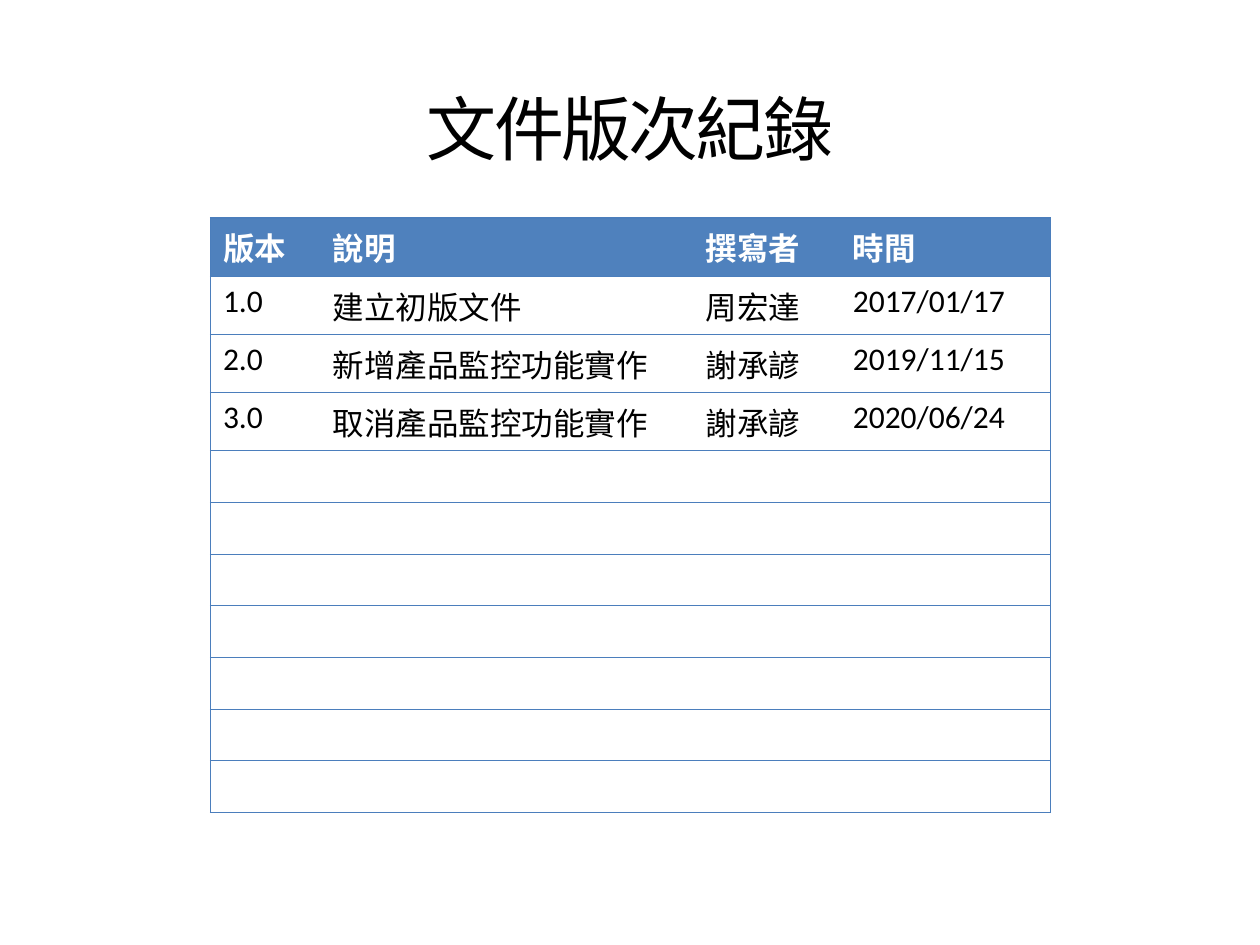
from lxml.etree import SubElement
from pptx import Presentation
from pptx.dml.color import RGBColor
from pptx.enum.text import MSO_ANCHOR, PP_ALIGN
from pptx.oxml.ns import qn
from pptx.util import Inches, Pt

TITLE = "文件版次紀錄"
HEADER = ("版本", "說明", "撰寫者", "時間")
REVISIONS = [
    ("1.0", "建立初版文件", "周宏達", "2017/01/17"),
    ("2.0", "新增產品監控功能實作", "謝承諺", "2019/11/15"),
    ("3.0", "取消產品監控功能實作", "謝承諺", "2020/06/24"),
]
EMPTY_ROWS = 7
COLUMN_WIDTHS = (0.87, 2.96, 1.17, 1.67)
ROW_HEIGHT = 0.41

THEME = {
    "title_font": "Noto Sans CJK SC",
    "table_font": "Calibri",
    "title_size": 40,
    "table_size": 18,
    "title_spacing": -1.5,
    "border_width": 0.75,
    "border": "4B7EBC",
    "header": "4F81BD",
    "header_text": "FFFFFF",
    "text": "000000",
}


def color(name):
    return RGBColor.from_string(THEME[name])


def style_span(span, font, size, text_color, bold=False):
    span.font.name = THEME[font]
    span.font.size = Pt(THEME[size])
    span.font.bold = bold
    span.font.color.rgb = color(text_color)


def add_title(page):
    box = page.shapes.title
    box.left, box.top = Inches(0.51), Inches(0.68)
    box.width, box.height = Inches(8.98), Inches(1.07)
    frame = box.text_frame
    frame.text = TITLE
    frame.vertical_anchor = MSO_ANCHOR.TOP
    frame.margin_left = frame.margin_right = 0
    frame.margin_top = frame.margin_bottom = 0
    paragraph = frame.paragraphs[0]
    paragraph.alignment = PP_ALIGN.CENTER
    span = paragraph.runs[0]
    style_span(span, "title_font", "title_size", "text")
    properties = span.font._element
    properties.set("spc", str(int(THEME["title_spacing"] * 100)))
    SubElement(properties, qn("a:ea"), typeface=THEME["title_font"])


def set_borders(cell, visible_sides):
    properties = cell._tc.get_or_add_tcPr()
    for side in "LRTB":
        line = SubElement(properties, qn(f"a:ln{side}"), w=str(Pt(THEME["border_width"])))
        if side in visible_sides:
            fill = SubElement(line, qn("a:solidFill"))
            SubElement(fill, qn("a:srgbClr"), val=THEME["border"])
        else:
            SubElement(line, qn("a:noFill"))


def add_revision_table(page):
    blank = ("",) * len(HEADER)
    rows = [HEADER, *REVISIONS, *[blank] * EMPTY_ROWS]
    table = page.shapes.add_table(
        len(rows), len(HEADER), Inches(1.67), Inches(1.73),
        Inches(sum(COLUMN_WIDTHS)), Inches(ROW_HEIGHT * len(rows)),
    ).table
    table.horz_banding = False
    for column, width in zip(table.columns, COLUMN_WIDTHS):
        column.width = Inches(width)
    for row_index, values in enumerate(rows):
        table.rows[row_index].height = Inches(ROW_HEIGHT)
        is_header = row_index == 0
        for column_index, value in enumerate(values):
            cell = table.cell(row_index, column_index)
            sides = "TB"
            if column_index == 0:
                sides += "L"
            if column_index == len(HEADER) - 1:
                sides += "R"
            set_borders(cell, sides)
            if is_header:
                cell.fill.solid()
                cell.fill.fore_color.rgb = color("header")
            else:
                cell.fill.background()
            if value:
                cell.text_frame.text = value
                span = cell.text_frame.paragraphs[0].runs[0]
                text_color = "header_text" if is_header else "text"
                style_span(span, "table_font", "table_size", text_color, is_header)


def main():
    deck = Presentation()
    deck.slide_width, deck.slide_height = Inches(10), Inches(7.5)
    page = deck.slides.add_slide(deck.slide_layouts[5])
    add_revision_table(page)
    add_title(page)
    deck.save("out.pptx")


if __name__ == "__main__":
    main()
